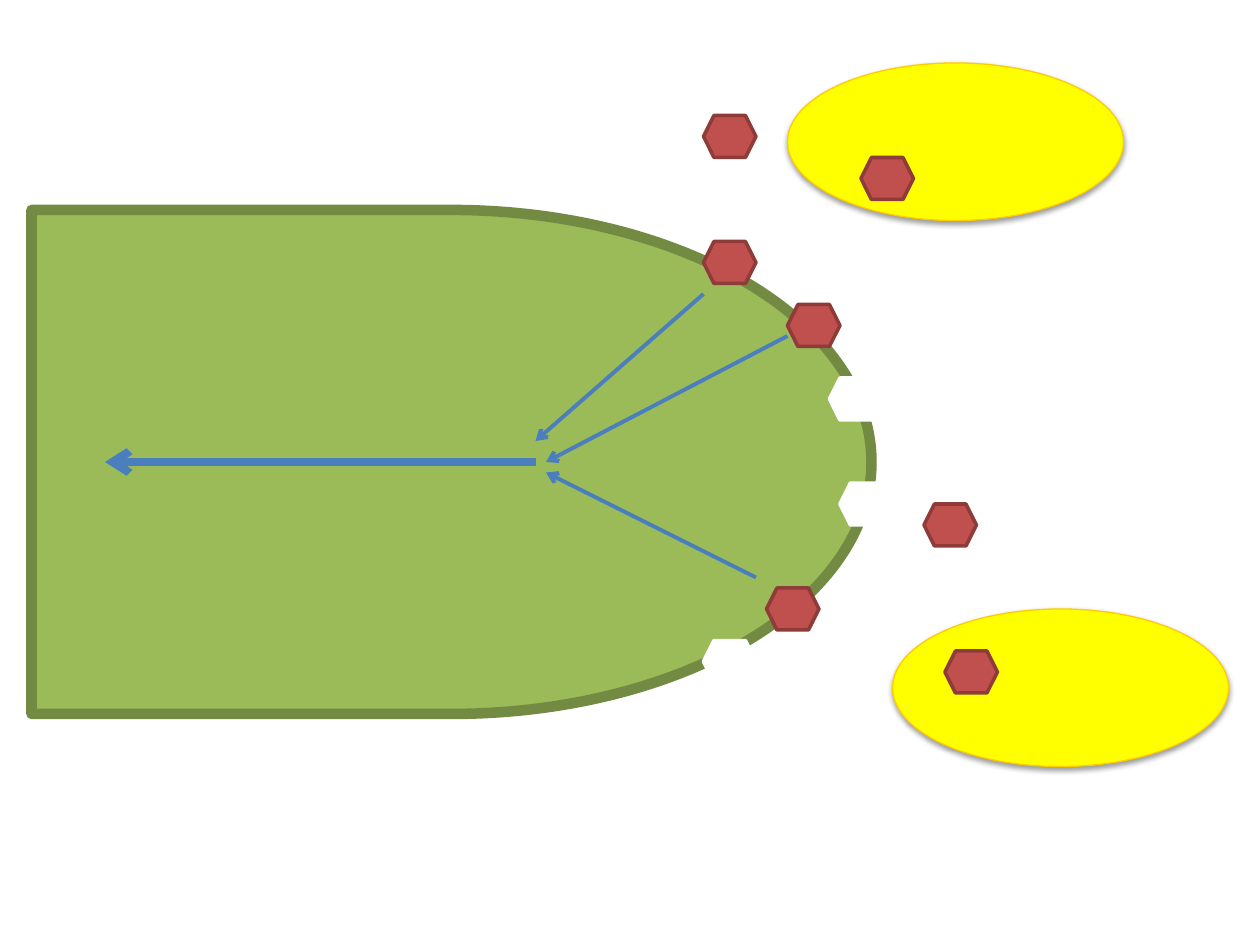
from lxml import etree
from pptx import Presentation
from pptx.dml.color import RGBColor
from pptx.enum.shapes import MSO_CONNECTOR, MSO_SHAPE
from pptx.oxml.ns import qn
from pptx.util import Inches, Pt

DELAY = MSO_SHAPE.FLOWCHART_DELAY
ELLIPSE = MSO_SHAPE.OVAL
HEXAGON = MSO_SHAPE.HEXAGON
STRAIGHT = MSO_CONNECTOR.STRAIGHT

GREEN = RGBColor(0x9B, 0xBB, 0x59)
DARK_GREEN = RGBColor(0x73, 0x8A, 0x42)
YELLOW = RGBColor(0xFF, 0xFF, 0x00)
AMBER = RGBColor(0xFF, 0xCC, 0x00)
RED = RGBColor(0xC0, 0x50, 0x4D)
DARK_RED = RGBColor(0x8E, 0x3B, 0x39)
WHITE = RGBColor(0xFF, 0xFF, 0xFF)
BLUE = RGBColor(0x4B, 0x7E, 0xBC)

COLUMNS, ROWS = 120, 90
HEXAGON_SIZE = (5, 4)
ELLIPSE_SIZE = (32, 15)


class Diagram:
    """Places elements on a slide; lengths are columns and rows of the grid."""

    def __init__(self, presentation):
        self.slide = presentation.slides.add_slide(presentation.slide_layouts[6])
        self.column = presentation.slide_width / COLUMNS
        self.row = presentation.slide_height / ROWS

    def scale(self, column, row):
        return round(column * self.column), round(row * self.row)

    def shape(self, kind, position, size, fill, outline, width):
        shape = self.slide.shapes.add_shape(
            kind, *self.scale(*position), *self.scale(*size))
        shape.fill.solid()
        shape.fill.fore_color.rgb = fill
        shape.line.color.rgb = outline
        shape.line.width = Pt(width)
        shape.shadow.inherit = False
        return shape

    def hexagon(self, position, fill, outline):
        return self.shape(HEXAGON, position, HEXAGON_SIZE, fill, outline, 2)

    def ellipse(self, position):
        shape = self.shape(ELLIPSE, position, ELLIPSE_SIZE, YELLOW, AMBER, 0.75)
        effects = shape.element.spPr.find(qn("a:effectLst"))
        shadow = etree.SubElement(
            effects, qn("a:outerShdw"), blurRad=str(Pt(3.1)),
            dist=str(Pt(1.6)), dir="5400000", rotWithShape="0")
        color = etree.SubElement(shadow, qn("a:srgbClr"), val="000000")
        etree.SubElement(color, qn("a:alpha"), val="38000")
        return shape

    def arrow(self, start, end, width):
        connector = self.slide.shapes.add_connector(
            STRAIGHT, *self.scale(*start), *self.scale(*end))
        connector.line.color.rgb = BLUE
        connector.line.width = Pt(width)
        properties = connector.element.spPr
        etree.SubElement(properties.find(qn("a:ln")), qn("a:tailEnd"), type="arrow")
        etree.SubElement(properties, qn("a:effectLst"))
        return connector


def main():
    presentation = Presentation()
    presentation.slide_width = Inches(10)
    presentation.slide_height = Inches(7.5)
    diagram = Diagram(presentation)

    # Rounded green body
    diagram.shape(DELAY, (3, 20), (80, 48), GREEN, DARK_GREEN, 6)

    # Yellow ellipses
    for position in [(75, 6), (85, 58)]:
        diagram.ellipse(position)

    # Red hexagons, bound and free
    for position in [(73, 56), (88, 48), (90, 62), (82, 15),
                     (67, 23), (75, 29), (67, 11)]:
        diagram.hexagon(position, RED, DARK_RED)

    # Empty notches in the rim
    for position in [(80, 46), (79, 36), (67, 61)]:
        diagram.hexagon(position, WHITE, WHITE)

    # Arrows converging on the centre, then one leading away
    for start, end in [((67, 28), (51, 42)), ((72, 55), (52, 45)),
                       ((75, 32), (52, 44))]:
        diagram.arrow(start, end, 2.25)
    diagram.arrow((51, 44), (10, 44), 4.5)

    presentation.save("out.pptx")


if __name__ == "__main__":
    main()
